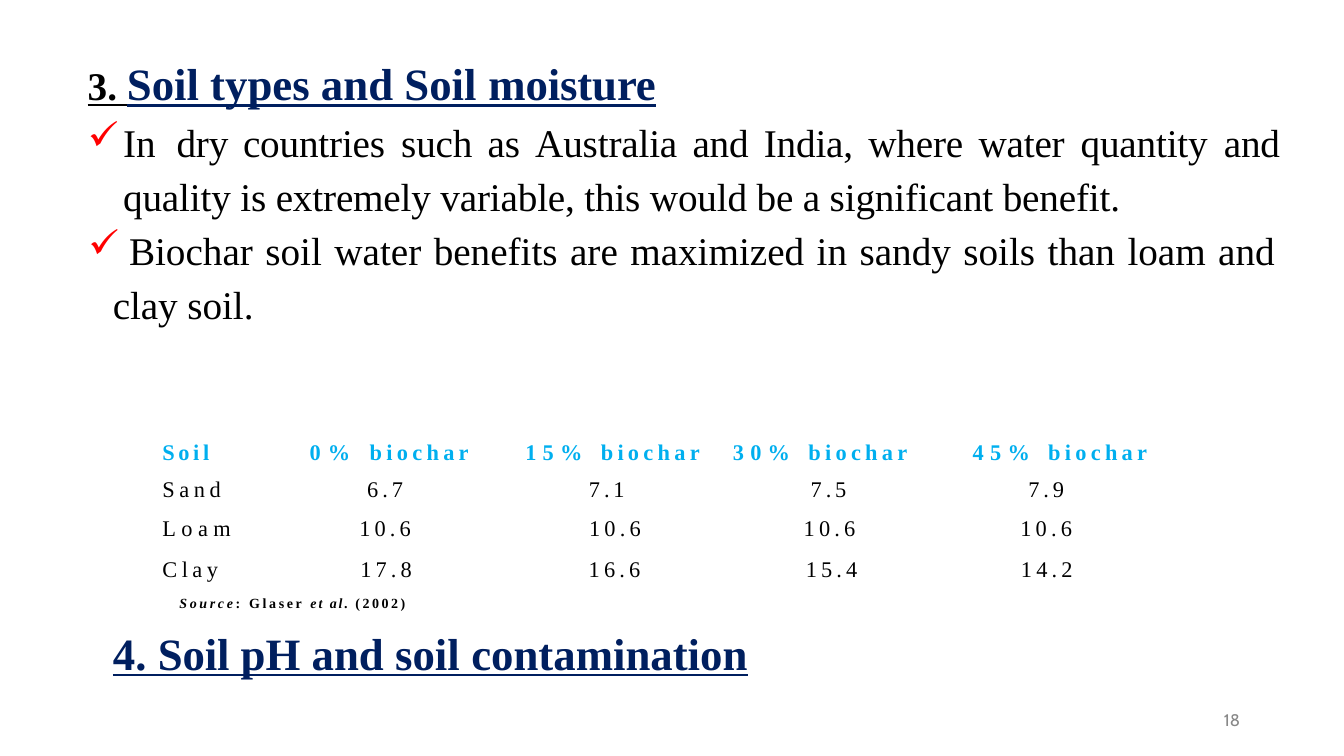
from dataclasses import dataclass, replace
from typing import Optional

from lxml import etree
from pptx import Presentation
from pptx.dml.color import RGBColor
from pptx.enum import text
from pptx.oxml import ns
from pptx.util import Pt

COLORS = {"ink": "000000", "navy": "001F5F", "sky": "00AFEF", "check": "FF0000", "number": "888888"}
SERIF = "Times New Roman"


@dataclass(frozen=True)
class Run:
    words: str
    size: float = 28
    color: str = "ink"
    bold: bool = False
    italic: bool = False
    underline: bool = False
    spacing: float = 0
    font: str = SERIF


@dataclass(frozen=True)
class Para:
    runs: list[Run]
    left: float = 0.7
    first: float = 0
    before: float = 0
    line: Optional[float] = None  # points when above 5, otherwise a multiple
    centered: bool = False
    check: bool = False
    tabs: tuple[float, ...] = ()


@dataclass(frozen=True)
class Box:
    left: float
    top: float
    width: float
    height: float
    paras: list[Para]


def add_runs(p, runs: list[Run]) -> None:
    for run in runs:
        r = p.add_run()
        r.text = run.words
        f = r.font
        f.name, f.size = run.font, Pt(run.size)
        f.bold, f.italic, f.underline = run.bold, run.italic, run.underline
        f.color.rgb = RGBColor.from_string(COLORS[run.color])
        r._r.get_or_add_rPr().set("spc", str(round(run.spacing * 100)))


def add_check_and_tabs(pPr, para: Para) -> None:
    if para.check:
        color = etree.SubElement(pPr, ns.qn("a:buClr"))
        etree.SubElement(color, ns.qn("a:srgbClr"), val=COLORS["check"])
        etree.SubElement(pPr, ns.qn("a:buChar"), char="✓")
    if para.tabs:
        stops = etree.SubElement(pPr, ns.qn("a:tabLst"))
        for stop in para.tabs:
            etree.SubElement(stops, ns.qn("a:tab"), pos=str(int(Pt(stop))), algn="l")


def fill_text(tf, paras: list[Para]) -> None:
    for i, para in enumerate(paras):
        p = tf.add_paragraph() if i else tf.paragraphs[0]
        p.alignment = text.PP_ALIGN.CENTER if para.centered else text.PP_ALIGN.LEFT
        p.space_before = Pt(para.before)
        if para.line:
            p.line_spacing = Pt(para.line) if para.line > 5 else para.line
        pPr = p._p.get_or_add_pPr()
        pPr.set("marL", str(int(Pt(para.left))))
        pPr.set("indent", str(int(Pt(para.first))))
        add_check_and_tabs(pPr, para)
        add_runs(p, para.runs)


def add_box(slide, box: Box) -> None:
    sp = slide.shapes.add_textbox(Pt(box.left), Pt(box.top), Pt(box.width), Pt(box.height))
    tf = sp.text_frame
    tf.word_wrap = True
    tf.margin_left = tf.margin_right = tf.margin_bottom = 0
    tf.margin_top = Pt(0.9)
    fill_text(tf, box.paras)


def widen_gaps(words: str, gap: float, spacing: float = 0) -> list[Run]:
    """Split a line into word runs and wider space runs."""
    first, *rest = words.split(" ")
    runs = [Run(first, spacing=spacing)]
    for word in rest:
        runs += [Run(" ", spacing=gap), Run(word, spacing=spacing)]
    return runs


HEAD = Run("", size=32, color="navy", bold=True, underline=True)
CELL = Run("", size=16, spacing=3)
CITE = Run("", size=10, bold=True, spacing=1.8)

BOXES = [
    Box(871.2, 508.2, 18, 13.7, [
        Para([Run("18", size=12, color="number", font="Cabin")], left=3, line=12.4)]),
    Box(62, 39, 410, 40, [Para([
        replace(HEAD, words="3. ", size=28, color="ink"),
        replace(HEAD, words="Soil types and Soil"),
        replace(HEAD, words=" ", spacing=-1.1),
        replace(HEAD, words="moisture", spacing=-0.1)], before=1.1)]),
    Box(62, 78.5, 854, 118, [
        Para([Run("In\tdry\tcountries\t", spacing=-0.1),
              *widen_gaps("such as Australia and India, where water", 3.8, -0.1),
              Run("\tquantity\tand quality is extremely variable, "
                  "this would be a significant benefit.", spacing=-0.1)],
             left=26, first=-25.2, before=1, line=1.15, check=True,
             tabs=(64.1, 111.6, 224.6, 709.9, 812.2)),
        Para(widen_gaps("Biochar soil water benefits are maximized in sandy soils "
                        "than loam and", 1.9),
             left=30.2, first=-29, before=5, check=True)]),
    Box(80, 199.5, 104, 35, [
        Para([Run("clay ", spacing=-0.1), Run("soil.")], before=0.9)]),
    Box(127.5, 424, 164, 14.5, [Para([
        replace(CITE, words="Source", italic=True, spacing=1.9),
        replace(CITE, words=": Glaser ", spacing=1.9),
        replace(CITE, words="et al. ", italic=True, spacing=1.4),
        replace(CITE, words="(2002)")], before=1.1)]),
    Box(80, 445.7, 458, 40, [Para([
        replace(HEAD, words="4. "),
        replace(HEAD, words="Soil ", spacing=-0.1),
        replace(HEAD, words="pH and soil"),
        replace(HEAD, words=" ", spacing=-0.8),
        replace(HEAD, words="contamination")], before=1)]),
]

COL_WIDTHS = [81.4, 159.8, 157, 159.8, 151.2]
ROW_HEIGHTS = [23, 28, 28, 23]
# share of biochar, left indent, spacing of the share
HEADERS = [("0% ", 26, 5), ("15% ", 20.2, 4.5), ("30% ", 11.5, 4.5), ("45% ", 23, 4.5)]
# soil, its letter spacing, value spacing, values, left indents
SOILS = [
    ("Sand", 3.3, 2.8, ["6.7", "7.1", "7.5", "7.9"], [0, 0, 0, 0]),
    ("Loam", 3.9, 3, ["10.6"] * 4, [0, 11.5, 1.4, 0]),
    ("Clay", 3.2, 3, ["17.8", "16.6", "15.4", "14.2"], [1.4, 65.5, 4.3, 0.7]),
]


def moisture_rows() -> list[list[Para]]:
    label = replace(CELL, color="sky", bold=True)
    rows = [[Para([replace(label, words="Soil", spacing=2.6)], left=2.2, line=17.7)]]
    for share, left, spacing in HEADERS:
        rows[0].append(Para([replace(label, words=share, spacing=spacing),
                             replace(label, words="biochar", spacing=3.1)], left=left, line=17.7))
    for soil, soil_spacing, spacing, values, lefts in SOILS:
        line = 18.5 if soil == "Clay" else None
        row = [Para([replace(CELL, words=soil, spacing=soil_spacing)],
                    left=2.2, before=3.5, line=line)]
        for value, left in zip(values, lefts):
            row.append(Para([replace(CELL, words=value, spacing=spacing)], left=left,
                            before=3.5, line=line, centered=left < 50))
        rows.append(row)
    return rows


def add_moisture_table(slide) -> None:
    rows = moisture_rows()
    table = slide.shapes.add_table(len(rows), len(COL_WIDTHS), Pt(113.8), Pt(314.6),
                                   Pt(sum(COL_WIDTHS)), Pt(sum(ROW_HEIGHTS))).table
    table.first_row = table.horz_banding = False
    for column, width in zip(table.columns, COL_WIDTHS):
        column.width = Pt(width)
    for i, (row, height) in enumerate(zip(rows, ROW_HEIGHTS)):
        table.rows[i].height = Pt(height)
        for j, para in enumerate(row):
            cell = table.cell(i, j)
            cell.fill.background()
            cell.margin_left = cell.margin_right = cell.margin_bottom = 0
            cell.margin_top = Pt(3.6 if i else 0)
            fill_text(cell.text_frame, [para])


def main() -> None:
    prs = Presentation()
    prs.slide_width, prs.slide_height = Pt(960), Pt(540)
    slide = prs.slides.add_slide(prs.slide_layouts[6])
    for box in BOXES:
        add_box(slide, box)
    add_moisture_table(slide)
    prs.save("out.pptx")


if __name__ == "__main__":
    main()
